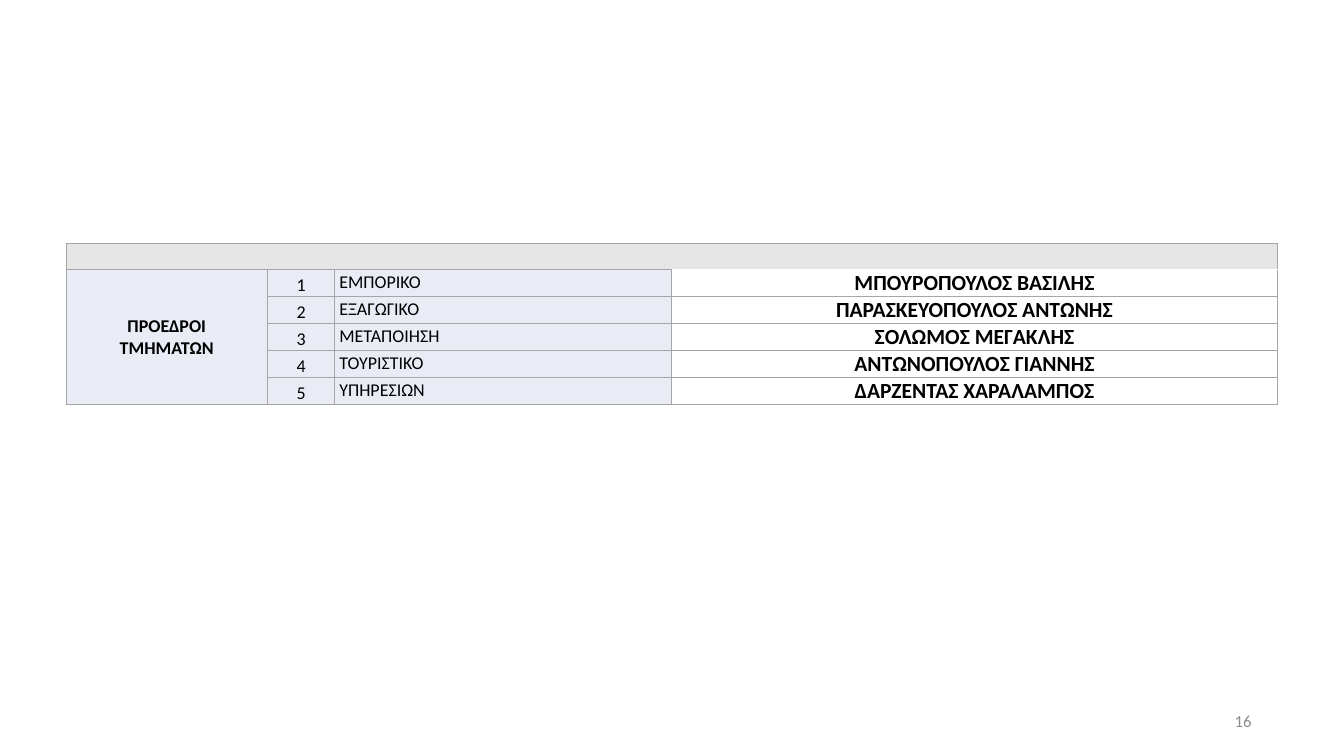
from lxml.etree import SubElement
from pptx import Presentation
from pptx.dml.color import RGBColor
from pptx.enum.text import MSO_ANCHOR, PP_ALIGN
from pptx.oxml.ns import qn
from pptx.util import Inches, Pt

THEME = {
    "font": "Calibri",
    "text": "000000",
    "number": "8C8C8C",
    "header": "E7E6E6",
    "label": "E9EBF5",
    "paper": "FFFFFF",
    "border": "A6A6A6",
    "body_size": 20,
    "name_size": 24,
    "number_size": 18.7,
}
SECTIONS = [
    ("ΕΜΠΟΡΙΚΟ", "ΜΠΟΥΡΟΠΟΥΛΟΣ ΒΑΣΙΛΗΣ"),
    ("ΕΞΑΓΩΓΙΚΟ", "ΠΑΡΑΣΚΕΥΟΠΟΥΛΟΣ ΑΝΤΩΝΗΣ"),
    ("ΜΕΤΑΠΟΙΗΣΗ", "ΣΟΛΩΜΟΣ ΜΕΓΑΚΛΗΣ"),
    ("ΤΟΥΡΙΣΤΙΚΟ", "ΑΝΤΩΝΟΠΟΥΛΟΣ ΓΙΑΝΝΗΣ"),
    ("ΥΠΗΡΕΣΙΩΝ", "ΔΑΡΖΕΝΤΑΣ ΧΑΡΑΛΑΜΠΟΣ"),
]
COLUMN_WIDTHS = [3.12, 1.04, 5.21, 9.37]
ROW_HEIGHT = 0.41


def write(text_frame, lines, size, color, align, bold=False):
    for index, line in enumerate(lines):
        paragraph = text_frame.paragraphs[0] if index == 0 else text_frame.add_paragraph()
        paragraph.alignment = align
        run = paragraph.add_run()
        run.text = line
        run.font.name = THEME["font"]
        run.font.size = Pt(size)
        run.font.bold = bold
        run.font.color.rgb = RGBColor.from_string(color)


def style_cell(cell, fill, top, bottom):
    cell.margin_left = cell.margin_right = cell.margin_top = Inches(0.01)
    cell.margin_bottom = 0
    properties = cell._tc.get_or_add_tcPr()
    edges = {"L": THEME["border"], "R": THEME["border"], "T": top, "B": bottom}
    for edge, color in edges.items():
        line = SubElement(properties, qn(f"a:ln{edge}"), w=str(Pt(1)))
        SubElement(SubElement(line, qn("a:solidFill")), qn("a:srgbClr"), val=color)
    cell.fill.solid()
    cell.fill.fore_color.rgb = RGBColor.from_string(fill)


presentation = Presentation()
presentation.slide_width = Inches(20.79)
presentation.slide_height = Inches(11.69)
slide = presentation.slides.add_slide(presentation.slide_layouts[6])

row_count = len(SECTIONS) + 1
column_count = len(COLUMN_WIDTHS)
name_column = column_count - 1
table = slide.shapes.add_table(
    row_count, column_count, Inches(1.02), Inches(3.76),
    Inches(sum(COLUMN_WIDTHS)), Inches(ROW_HEIGHT * row_count),
).table
table.first_row = False
table.horz_banding = False
for column, width in zip(table.columns, COLUMN_WIDTHS):
    column.width = Inches(width)

for row_index, row in enumerate(table.rows):
    row.height = Inches(ROW_HEIGHT)
    for column_index, cell in enumerate(row.cells):
        is_name = column_index == name_column
        fill = THEME["paper"] if is_name else THEME["label"]
        if row_index == 0:
            fill = THEME["header"]
        top = THEME["paper"] if is_name and row_index == 1 else THEME["border"]
        bottom = THEME["paper"] if is_name and row_index == 0 else THEME["border"]
        style_cell(cell, fill, top, bottom)

table.cell(0, 0).merge(table.cell(0, name_column))
group = table.cell(1, 0)
group.merge(table.cell(row_count - 1, 0))
group.vertical_anchor = MSO_ANCHOR.MIDDLE
write(group.text_frame, ["ΠΡΟΕΔΡΟΙ", "ΤΜΗΜΑΤΩΝ"], THEME["body_size"], THEME["text"],
      PP_ALIGN.CENTER, bold=True)

for number, (section, president) in enumerate(SECTIONS, start=1):
    number_cell, section_cell, name_cell = [table.cell(number, column) for column in range(1, column_count)]
    number_cell.vertical_anchor = name_cell.vertical_anchor = MSO_ANCHOR.BOTTOM
    section_cell.vertical_anchor = MSO_ANCHOR.TOP
    section_cell.margin_left = section_cell.margin_right = Inches(0.07)
    section_cell.margin_top = 0
    write(number_cell.text_frame, [str(number)], THEME["body_size"], THEME["text"], PP_ALIGN.CENTER)
    write(section_cell.text_frame, [section], THEME["body_size"], THEME["text"], PP_ALIGN.JUSTIFY)
    write(name_cell.text_frame, [president], THEME["name_size"], THEME["text"], PP_ALIGN.CENTER, bold=True)
    section_paragraph = section_cell.text_frame.paragraphs[0]
    section_paragraph.line_spacing = 1.07
    section_paragraph.space_after = Pt(8)

page_number = slide.shapes.add_textbox(Inches(14.68), Inches(10.84), Inches(4.68), Inches(0.62))
frame = page_number.text_frame
frame.word_wrap = True
frame.vertical_anchor = MSO_ANCHOR.MIDDLE
frame.margin_left = frame.margin_right = frame.margin_top = frame.margin_bottom = 0
write(frame, ["16"], THEME["number_size"], THEME["number"], PP_ALIGN.RIGHT)

presentation.save("out.pptx")
